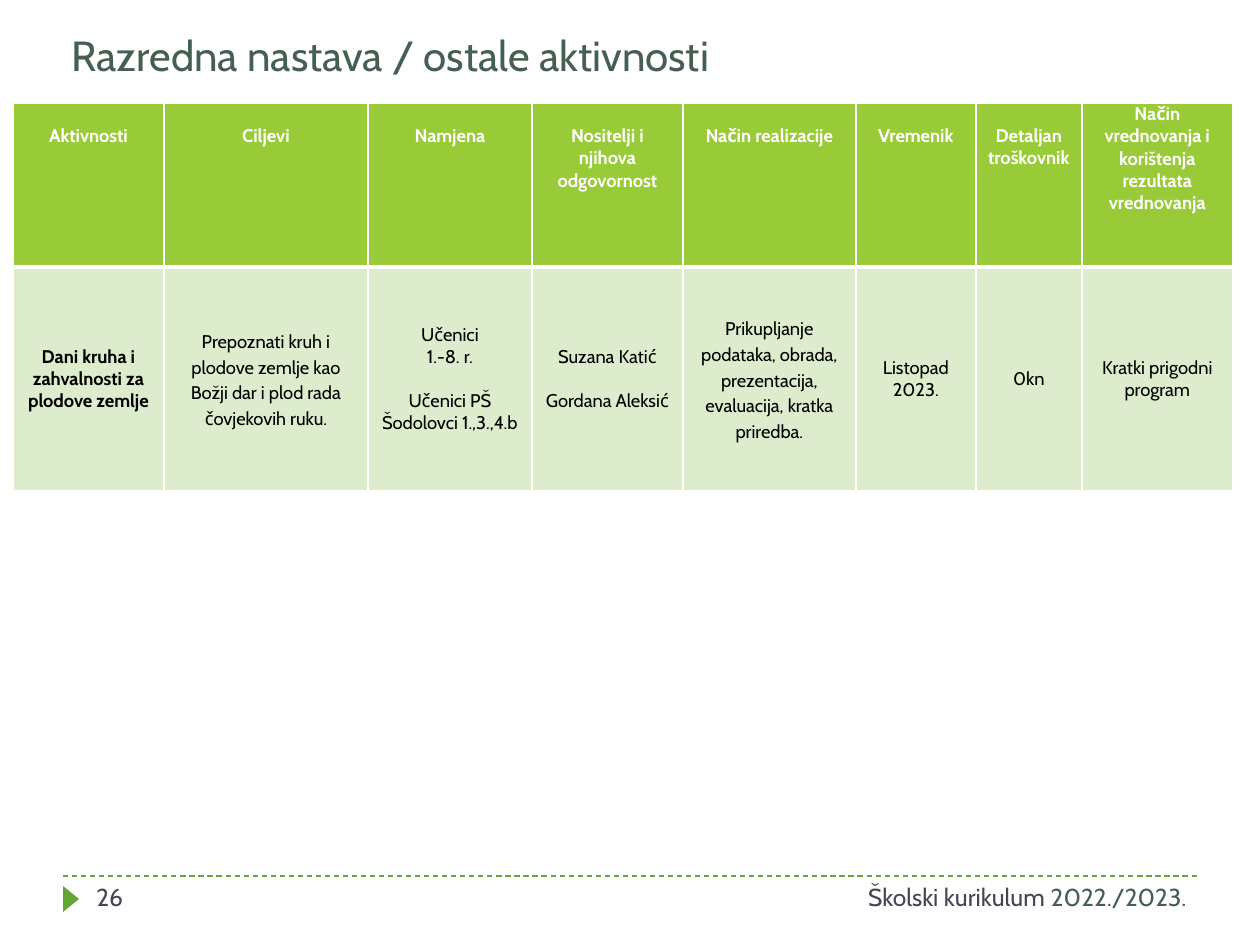
from lxml import etree
from pptx import Presentation
from pptx.dml.color import RGBColor
from pptx.enum.dml import MSO_LINE
from pptx.enum.shapes import MSO_CONNECTOR, MSO_SHAPE
from pptx.enum.text import MSO_ANCHOR, PP_ALIGN
from pptx.oxml.ns import qn
from pptx.util import Emu, Pt

LEFT, CENTER, RIGHT = PP_ALIGN.LEFT, PP_ALIGN.CENTER, PP_ALIGN.RIGHT
TOP, MIDDLE, BOTTOM = MSO_ANCHOR.TOP, MSO_ANCHOR.MIDDLE, MSO_ANCHOR.BOTTOM
DASH = MSO_LINE.DASH
STRAIGHT = MSO_CONNECTOR.STRAIGHT
TRIANGLE = MSO_SHAPE.ISOSCELES_TRIANGLE

WHITE = RGBColor(0xFF, 0xFF, 0xFF)
BLACK = RGBColor(0x00, 0x00, 0x00)
GREEN = RGBColor(0x63, 0xA5, 0x37)
LIME = RGBColor(0x99, 0xCB, 0x38)
PALE = RGBColor(0xDD, 0xEC, 0xCC)
DARK_GREEN = RGBColor(0x45, 0x5F, 0x51)
SLATE = RGBColor(0x46, 0x46, 0x53)

FONT = "Cabin"
LINE_GAP = 22


def px(value):
    return Emu(round(value * 914400 / 126))


def add_span(para, text, size, color, bold=False):
    span = para.add_run()
    span.text = text
    span.font.color.rgb = color
    for name, value in {"name": FONT, "size": Pt(size), "bold": bold}.items():
        setattr(span.font, name, value)


deck = Presentation()
deck.slide_width, deck.slide_height = px(1260), px(945)
page = deck.slides.add_slide(deck.slide_layouts[5])

title = page.shapes.title
title_place = {"left": px(59), "top": px(20), "width": px(1162), "height": px(66)}
for name, value in title_place.items():
    setattr(title, name, value)
title.text_frame.vertical_anchor = BOTTOM
title_para = title.text_frame.paragraphs[0]
title_para.alignment = LEFT
add_span(title_para, "Razredna nastava / ostale aktivnosti", 24, DARK_GREEN)

footer_rule = page.shapes.add_connector(STRAIGHT, px(63), px(876), px(1197), px(876))
footer_rule.line.color.rgb = GREEN
footer_rule.line.width = Pt(0.75)
footer_rule.line.dash_style = DASH
etree.SubElement(footer_rule._element.spPr, qn("a:effectLst"))

marker = page.shapes.add_shape(TRIANGLE, px(58), px(891), px(26), px(16))
marker.rotation = 90
marker.shadow.inherit = False
marker.fill.solid()
marker.fill.fore_color.rgb = GREEN
marker.line.fill.background()

footers = [
    (716, 483, RIGHT, [("Školski kurikulum ", SLATE), ("2022./2023.", DARK_GREEN)]),
    (84, 273, LEFT, [("26", SLATE)]),
]
for left, width, alignment, parts in footers:
    box = page.shapes.add_textbox(px(left), px(876), px(width), px(50))
    box.text_frame.word_wrap = True
    para = box.text_frame.paragraphs[0]
    para.alignment = alignment
    for text, color in parts:
        add_span(para, text, 14, color)

columns = [
    (151, "Aktivnosti", ["Dani kruha i zahvalnosti za plodove zemlje"]),
    (204, "Ciljevi",
     ["Prepoznati kruh i plodove zemlje kao Božji dar i plod rada čovjekovih ruku."]),
    (164, "Namjena", ["Učenici", "1.-8. r.", "Učenici PŠ Šodolovci 1.,3.,4.b"]),
    (151, "Nositelji i njihova odgovornost", ["Suzana Katić", "Gordana Aleksić"]),
    (173, "Način realizacije",
     ["Prikupljanje podataka, obrada, prezentacija, evaluacija, kratka priredba."]),
    (120, "Vremenik", ["Listopad 2023."]),
    (106, "Detaljan troškovnik", ["0kn"]),
    (151, "Način vrednovanja i korištenja rezultata vrednovanja",
     ["Kratki prigodni program"]),
]
LOOSE_COLUMNS = (1, 4)
LAST_COLUMN = len(columns) - 1
SPACED_PARAGRAPHS = ("Učenici PŠ Šodolovci 1.,3.,4.b", "Gordana Aleksić")

table_width = sum(width for width, _, _ in columns)
table = page.shapes.add_table(
    2, len(columns), px(13), px(103), px(table_width), px(388)).table
table.rows[0].height, table.rows[1].height = px(164), px(224)

for column, (width, heading, body) in enumerate(columns):
    table.columns[column].width = px(width)
    for row, lines in enumerate([[heading], body]):
        is_header = row == 0
        cell = table.cell(row, column)
        top_gap = LINE_GAP if is_header and column != LAST_COLUMN else 0
        cell_format = {
            "margin_left": px(9), "margin_right": px(9),
            "margin_top": px(top_gap), "margin_bottom": 0,
            "vertical_anchor": TOP if is_header else MIDDLE,
        }
        for name, value in cell_format.items():
            setattr(cell, name, value)
        cell.fill.solid()
        cell.fill.fore_color.rgb = LIME if is_header else PALE

        properties = cell._tc.get_or_add_tcPr()
        for position, side in enumerate(("lnL", "lnR", "lnT", "lnB")):
            thick = side == ("lnB" if is_header else "lnT")
            border = etree.Element(qn(f"a:{side}"), w=str(Pt(3 if thick else 1)))
            fill = etree.SubElement(border, qn("a:solidFill"))
            etree.SubElement(fill, qn("a:srgbClr"), val=str(WHITE))
            properties.insert(position, border)

        frame = cell.text_frame
        for index, text in enumerate(lines):
            para = frame.add_paragraph() if index else frame.paragraphs[0]
            para.alignment = CENTER
            if text in SPACED_PARAGRAPHS:
                para.space_before = px(LINE_GAP)
            if not is_header and column in LOOSE_COLUMNS:
                para.line_spacing = 1.15
            add_span(para, text, 10.5, WHITE if is_header else BLACK,
                     is_header or column == 0)

deck.save("out.pptx")
